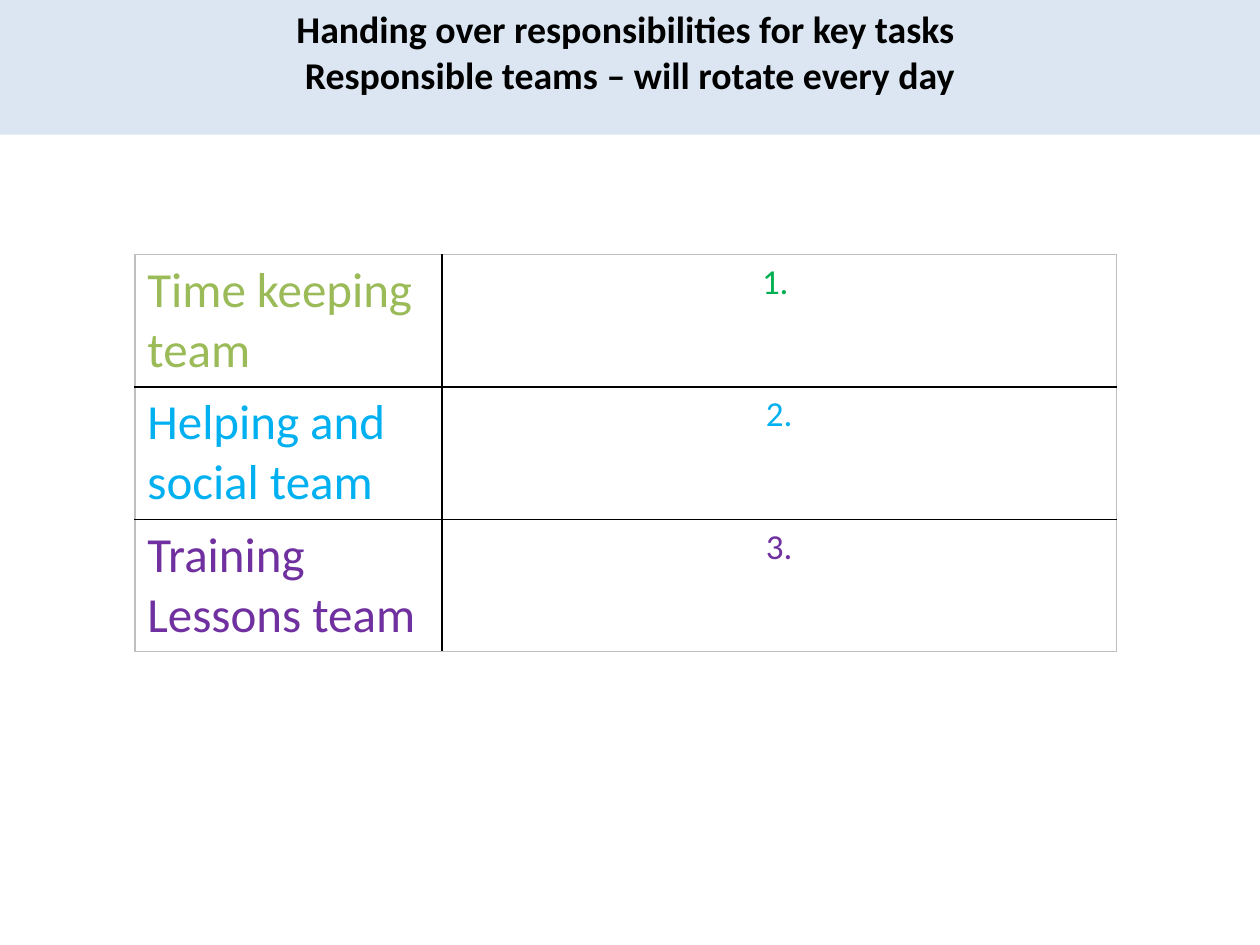
from pptx import Presentation
from pptx import util as u
from pptx.dml.color import RGBColor
from pptx.enum import shapes, text
from pptx.oxml.ns import qn
from lxml import etree

FONT = "Calibri"
INNER, OUTER = "000000", "BFBFBF"
TEAMS = [
    ("Time keeping team", "9BBB59", "1. ", "00B050"),
    ("Helping and social team", "00B0F0", "2.", "00B0F0"),
    ("Training Lessons team", "7030A0", "3.", "7030A0"),
]


def color(value):
    """Return the colour for a hex string."""
    return RGBColor.from_string(value)


def write(frame, content, size, ink="000000", bold=False, align=text.PP_ALIGN.LEFT):
    """Write one formatted paragraph, with line breaks at newlines."""
    frame.word_wrap = True
    para = frame.paragraphs[0]
    para.alignment = align
    for index, line in enumerate(content.split("\n")):
        if index:
            para.add_line_break()
        span = para.add_run()
        span.text = line
        span.font.name = FONT
        span.font.size = u.Pt(size)
        span.font.bold = bold
        span.font.color.rgb = color(ink)


def add_title(page, content):
    """Add the title band across the top of the page."""
    band = page.shapes.add_shape(
        shapes.MSO_SHAPE.RECTANGLE, 0, 0, u.Inches(10), u.Inches(1.07))
    band.shadow.inherit = False
    band.fill.solid()
    band.fill.fore_color.rgb = color("DCE6F2")
    band.line.fill.background()
    band.text_frame.vertical_anchor = text.MSO_ANCHOR.TOP
    write(band.text_frame, content, 21.6, bold=True, align=text.PP_ALIGN.CENTER)


def set_borders(cell, borders):
    """Draw one-point cell borders from a mapping of side to hex colour."""
    properties = cell._tc.get_or_add_tcPr()
    for index, side in enumerate(("L", "R", "T", "B")):
        line = etree.Element(qn(f"a:ln{side}"), w=str(u.Pt(1)))
        fill = etree.SubElement(line, qn("a:solidFill"))
        etree.SubElement(fill, qn("a:srgbClr"), val=borders[side])
        properties.insert(index, line)


def add_team_table(page, teams):
    """Add the table of teams and their numbers."""
    widths, height = (2.44, 5.35), 1.05
    last = len(teams) - 1
    frame = page.shapes.add_table(
        len(teams), 2, u.Inches(1.07), u.Inches(2.02),
        u.Inches(sum(widths)), u.Inches(height * len(teams)))
    table = frame.table
    for column, width in zip(table.columns, widths):
        column.width = u.Inches(width)
    for row, (team, team_ink, number, number_ink) in enumerate(teams):
        table.rows[row].height = u.Inches(height)
        name_cell, number_cell = table.cell(row, 0), table.cell(row, 1)
        write(name_cell.text_frame, team, 28, ink=team_ink)
        write(number_cell.text_frame, number, 20, ink=number_ink,
              align=text.PP_ALIGN.CENTER)
        edges = {"T": INNER if row else OUTER, "B": INNER if row < last else OUTER}
        for cell, left, right in ((name_cell, OUTER, INNER), (number_cell, INNER, OUTER)):
            cell.fill.solid()
            cell.fill.fore_color.rgb = color("FFFFFF")
            set_borders(cell, {"L": left, "R": right, **edges})


def main():
    """Build the slide and save it."""
    deck = Presentation()
    deck.slide_width, deck.slide_height = u.Inches(10), u.Inches(7.5)
    page = deck.slides.add_slide(deck.slide_layouts[6])
    add_team_table(page, TEAMS)
    add_title(page, "Handing over responsibilities for key tasks \n"
                    "Responsible teams – will rotate every day\n")
    deck.save("out.pptx")


if __name__ == "__main__":
    main()
